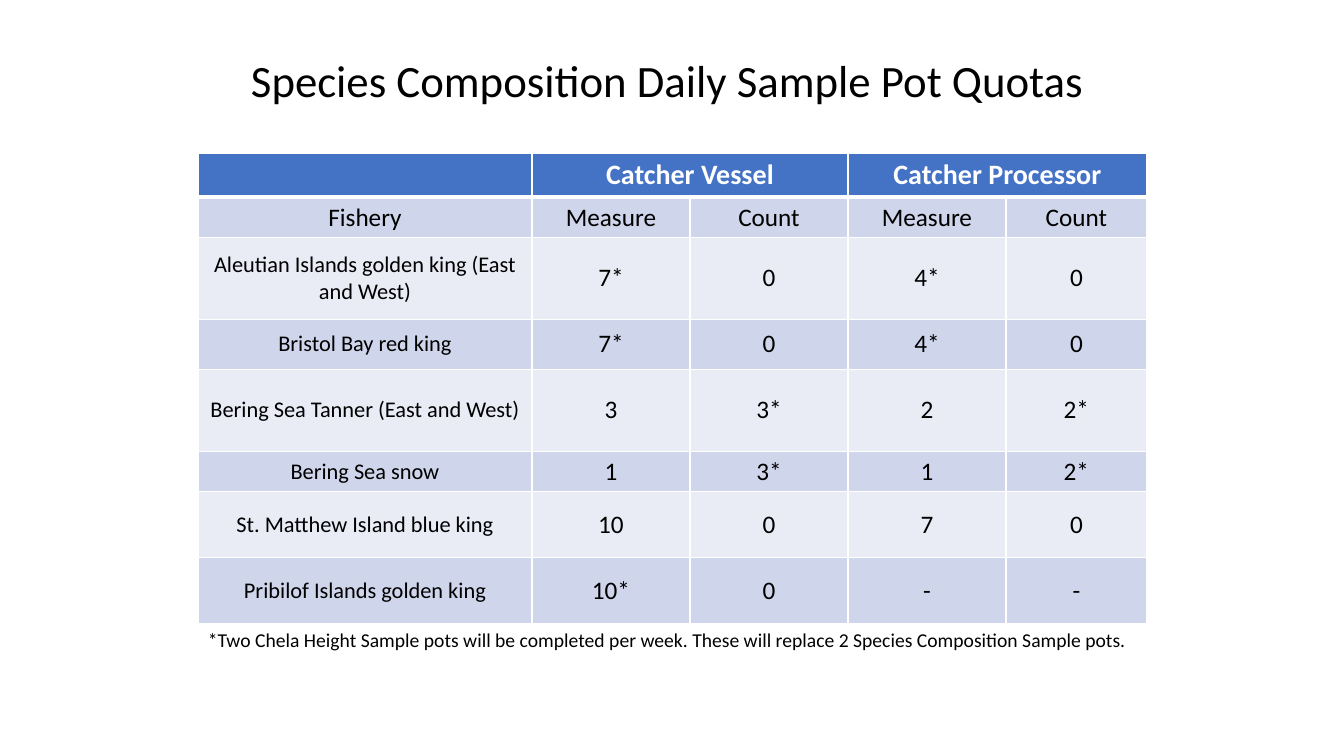
from lxml import etree
from pptx import Presentation
from pptx.dml.color import RGBColor
from pptx.enum.text import MSO_ANCHOR, PP_ALIGN
from pptx.oxml.ns import qn
from pptx.util import Pt

MIDDLE, TOP = MSO_ANCHOR.MIDDLE, MSO_ANCHOR.TOP
CENTER, LEFT = PP_ALIGN.CENTER, PP_ALIGN.LEFT

# Content
TITLE = "Species Composition Daily Sample Pot Quotas "
NOTE = ("*Two Chela Height Sample pots will be completed per week. "
        "These will replace 2 Species Composition Sample pots.")
ROWS = [
    ("", "Catcher Vessel", "", "Catcher Processor", ""),
    ("Fishery", "Measure", "Count", "Measure", "Count"),
    ("Aleutian Islands golden king (East and West)", "7*", "0", "4*", "0"),
    ("Bristol Bay red king", "7*", "0", "4*", "0"),
    ("Bering Sea Tanner (East and West)", "3", "3*", "2", "2*"),
    ("Bering Sea snow", "1", "3*", "1", "2*"),
    ("St. Matthew Island blue king", "10", "0", "7", "0"),
    ("Pribilof Islands golden king", "10*", "0", "-", "-"),
]

# Layout in px and formats
EMU_PER_PX = 914400 / 100.8
SLIDE_SIZE = (1344, 756)
TITLE_BOX = (97, 36, 1151, 94)
TABLE_LEFT, TABLE_TOP = 198, 153
COLUMN_WIDTHS = [334, 158, 158, 158, 141]
ROW_HEIGHTS = [44, 40, 82, 50, 82, 40, 66, 66]
NOTE_HEIGHT = 34
HEADER_SPANS = [(1, 2), (3, 4)]
COLORS = {"header": "4472C4", "dark_band": "CFD5EA", "light_band": "E9EBF5",
          "white": "FFFFFF", "text": "000000"}
FONT = "Calibri"


def px(length):
    return round(length * EMU_PER_PX)


def rgb(name):
    return RGBColor.from_string(COLORS[name])


def write(frame, text, size, color="text", bold=False, align=CENTER, anchor=MIDDLE):
    frame.word_wrap = True
    frame.vertical_anchor = anchor
    paragraph = frame.paragraphs[0]
    paragraph.alignment = align
    paragraph.text = text
    for name, value in {"name": FONT, "size": Pt(size), "bold": bold}.items():
        setattr(paragraph.font, name, value)
    paragraph.font.color.rgb = rgb(color)
    return paragraph


def add_text(slide, box, *content, **formats):
    shape = slide.shapes.add_textbox(*map(px, box))
    return write(shape.text_frame, *content, **formats)


def set_borders(cell, top, bottom):
    properties = cell._tc.get_or_add_tcPr()
    for side, points in {"lnL": 1, "lnR": 1, "lnT": top, "lnB": bottom}.items():
        line = etree.SubElement(properties, qn(f"a:{side}"), w=str(Pt(points)))
        fill = etree.SubElement(line, qn("a:solidFill"))
        etree.SubElement(fill, qn("a:srgbClr"), val=COLORS["white"])


def add_quota_table(slide):
    frame = slide.shapes.add_table(
        len(ROWS), len(COLUMN_WIDTHS), px(TABLE_LEFT), px(TABLE_TOP),
        px(sum(COLUMN_WIDTHS)), px(sum(ROW_HEIGHTS)))
    table = frame.table
    for column, width in zip(table.columns, COLUMN_WIDTHS):
        column.width = px(width)
    for row, height in zip(table.rows, ROW_HEIGHTS):
        row.height = px(height)

    for r, values in enumerate(ROWS):
        header = r == 0
        band = "header" if header else "dark_band" if r % 2 else "light_band"
        for c, value in enumerate(values):
            cell = table.cell(r, c)
            set_borders(cell, 3 if r == 1 else 1, 3 if header else 1)
            cell.fill.solid()
            cell.fill.fore_color.rgb = rgb(band)
            size = 20 if header else 16 if r > 1 and c == 0 else 18
            write(cell.text_frame, value, size, "white" if header else "text", header)
            cell.vertical_anchor = MIDDLE
    for first, last in HEADER_SPANS:
        table.cell(0, first).merge(table.cell(0, last))


def main():
    presentation = Presentation()
    presentation.slide_width, presentation.slide_height = map(px, SLIDE_SIZE)
    slide = presentation.slides.add_slide(presentation.slide_layouts[6])

    # Title, table and footnote
    add_text(slide, TITLE_BOX, TITLE, 32).line_spacing = 0.9
    add_quota_table(slide)
    note_box = (TABLE_LEFT, TABLE_TOP + sum(ROW_HEIGHTS), sum(COLUMN_WIDTHS), NOTE_HEIGHT)
    add_text(slide, note_box, NOTE, 14, align=LEFT, anchor=TOP)
    presentation.save("out.pptx")


if __name__ == "__main__":
    main()
